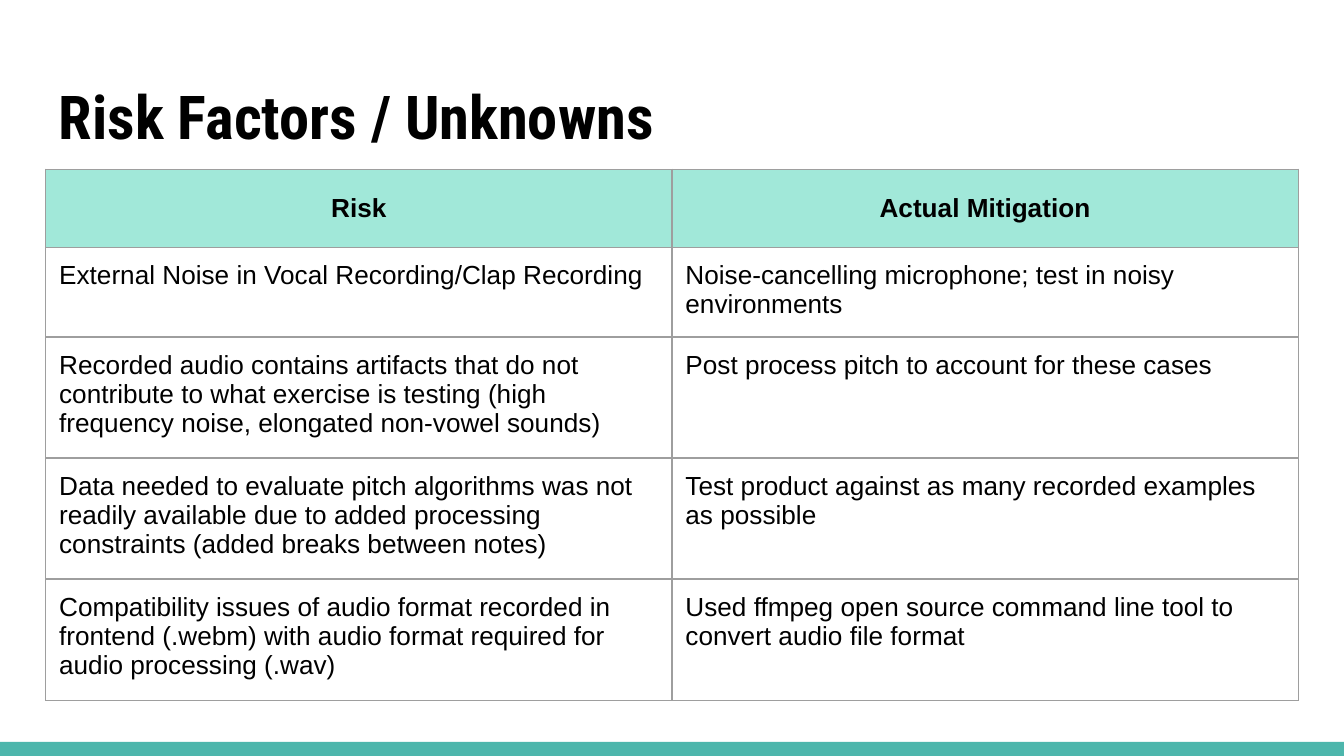
from lxml import etree
from pptx import Presentation
from pptx.dml.color import RGBColor
from pptx.enum.shapes import MSO_SHAPE
from pptx.enum.text import MSO_ANCHOR, PP_ALIGN
from pptx.oxml.ns import qn
from pptx.util import Inches, Pt

BLACK, TEAL, MINT, GREY = "000000", "4DB6AC", "A1E8D9", "9E9E9E"
PLAIN_TABLE_STYLE = "{2D5ABB26-0587-4C30-8999-92F81FD0307C}"
INSET = Inches(0.1)
LEFT, CONTENT_WIDTH = 0.34, 9.32

RISKS = [
    ("Risk", "Actual Mitigation"),
    ("External Noise in Vocal Recording/Clap Recording",
     "Noise-cancelling microphone; test in noisy environments"),
    ("Recorded audio contains artifacts that do not contribute to what exercise "
     "is testing (high frequency noise, elongated non-vowel sounds)",
     "Post process pitch to account for these cases"),
    ("Data needed to evaluate pitch algorithms was not readily available due to "
     "added processing constraints (added breaks between notes)",
     "Test product against as many recorded examples as possible"),
    ("Compatibility issues of audio format recorded in frontend (.webm) with "
     "audio format required for audio processing (.wav)",
     "Used ffmpeg open source command line tool to convert audio file format"),
]
# The fourth row grows to fit its text
ROW_HEIGHTS = [0.58, 0.64, 0.87, 0.56, 0.89]


def color(hex_code):
    return RGBColor.from_string(hex_code)


def set_text(frame, text, font_name, size, bold=False, align=PP_ALIGN.LEFT):
    frame.text = text
    frame.word_wrap = True
    paragraph = frame.paragraphs[0]
    paragraph.alignment = align
    paragraph.line_spacing = 1.0
    paragraph.space_before = paragraph.space_after = Pt(0)
    run = paragraph.runs[0]
    run.font.name, run.font.size, run.font.bold = font_name, Pt(size), bold
    run.font.color.rgb = color(BLACK)
    # Same typeface for East Asian and complex scripts
    for script in ("a:ea", "a:cs"):
        etree.SubElement(run.font._element, qn(script), typeface=font_name)
    # The paragraph mark keeps the text size
    etree.SubElement(paragraph._p, qn("a:endParaRPr"), sz=str(int(size * 100)))


def set_insets(target):
    target.margin_left = target.margin_right = INSET
    target.margin_top = target.margin_bottom = INSET


def set_borders(cell, hex_code, width):
    properties = cell._tc.get_or_add_tcPr()
    for index, side in enumerate(("a:lnL", "a:lnR", "a:lnT", "a:lnB")):
        line = etree.Element(qn(side), w=str(Pt(width)))
        fill = etree.SubElement(line, qn("a:solidFill"))
        etree.SubElement(fill, qn("a:srgbClr"), val=hex_code)
        properties.insert(index, line)


def add_footer_bar(slide):
    bar = slide.shapes.add_shape(MSO_SHAPE.RECTANGLE, 0, Inches(5.52),
                                 Inches(10), Inches(0.11))
    bar.shadow.inherit = False
    bar.fill.solid()
    bar.fill.fore_color.rgb = color(TEAL)
    bar.line.fill.background()


def add_title(slide, text):
    title = slide.shapes.add_textbox(Inches(LEFT), Inches(0.49),
                                     Inches(CONTENT_WIDTH), Inches(0.77))
    frame = title.text_frame
    set_insets(frame)
    frame.vertical_anchor = MSO_ANCHOR.TOP
    set_text(frame, text, "Roboto Condensed", 32.4, bold=True)


def add_risk_table(slide):
    table = slide.shapes.add_table(
        len(RISKS), 2, Inches(LEFT), Inches(1.26),
        Inches(CONTENT_WIDTH), Inches(sum(ROW_HEIGHTS))).table
    table.first_row = table.horz_banding = False
    table._tbl.tblPr.find(qn("a:tableStyleId")).text = PLAIN_TABLE_STYLE
    for row, height in zip(table.rows, ROW_HEIGHTS):
        row.height = Inches(height)
    for row_index, texts in enumerate(RISKS):
        header = row_index == 0
        for column_index, text in enumerate(texts):
            cell = table.cell(row_index, column_index)
            set_insets(cell)
            cell.vertical_anchor = MSO_ANCHOR.MIDDLE if header else MSO_ANCHOR.TOP
            if header:
                cell.fill.solid()
                cell.fill.fore_color.rgb = color(MINT)
            else:
                cell.fill.background()
            set_borders(cell, GREY, 0.75)
            set_text(cell.text_frame, text, "Arial", 14, bold=header,
                     align=PP_ALIGN.CENTER if header else PP_ALIGN.LEFT)


def main():
    presentation = Presentation()
    # Widescreen, 16:9
    presentation.slide_width = Inches(10)
    presentation.slide_height = Inches(10) * 9 // 16
    slide = presentation.slides.add_slide(presentation.slide_layouts[6])

    # Bar along the bottom edge
    add_footer_bar(slide)
    # Heading
    add_title(slide, "Risk Factors / Unknowns")
    # Risks and their mitigations
    add_risk_table(slide)

    presentation.save("out.pptx")


if __name__ == "__main__":
    main()
